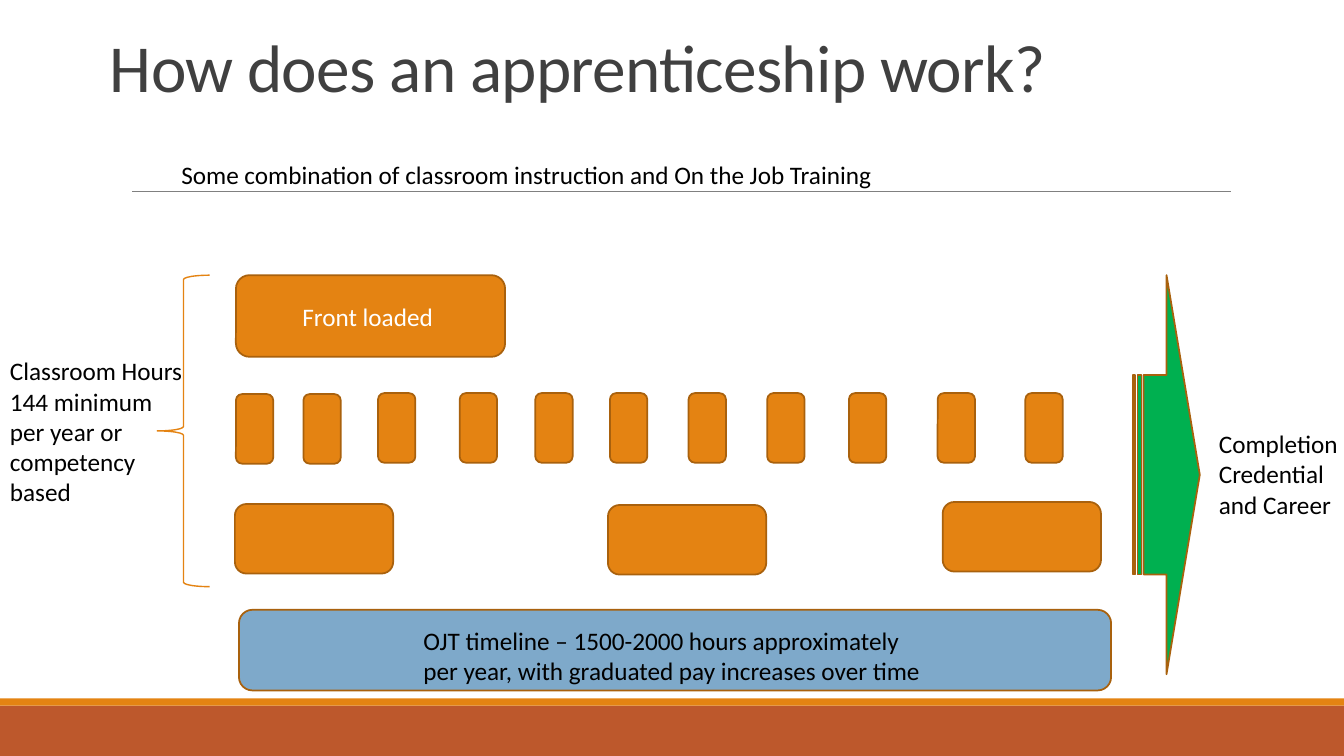
import pptx
import pptx.util
import pptx.dml.color
import pptx.enum.shapes
import pptx.enum.text
import pptx.oxml.ns
import lxml.etree

Inches = pptx.util.Inches
Pt = pptx.util.Pt
RGBColor = pptx.dml.color.RGBColor
SHAPE = pptx.enum.shapes.MSO_SHAPE
ALIGN = pptx.enum.text.PP_ALIGN
ANCHOR = pptx.enum.text.MSO_ANCHOR

ORANGE = RGBColor(0xE4, 0x83, 0x12)
RUST = RGBColor(0xBD, 0x58, 0x2C)
BROWN = RGBColor(0xA9, 0x61, 0x0D)
BLUE = RGBColor(0x7E, 0xA9, 0xCA)
GREEN = RGBColor(0x00, 0xB0, 0x50)
GRAY = RGBColor(0x80, 0x80, 0x80)
DARK = RGBColor(0x40, 0x40, 0x40)
BLACK = RGBColor(0, 0, 0)
WHITE = RGBColor(0xFF, 0xFF, 0xFF)

deck = pptx.Presentation()
deck.slide_width = Inches(13.33)
deck.slide_height = Inches(7.5)
slide = deck.slides.add_slide(deck.slide_layouts[5])


def write(holder, lines, size=18, color=BLACK, align=ALIGN.LEFT,
          anchor=ANCHOR.TOP, wrap=True):
    frame = holder.text_frame
    frame.word_wrap = wrap
    frame.auto_size = pptx.enum.text.MSO_AUTO_SIZE.NONE
    frame.vertical_anchor = anchor
    frame.text = "\n".join(lines)
    for paragraph in frame.paragraphs:
        paragraph.alignment = align
        for run in paragraph.runs:
            run.font.name = "Calibri"
            run.font.size = Pt(size)
            run.font.color.rgb = color


def draw(kind, left, top, width, height, fill=None, line=None, weight=1.25):
    shape = slide.shapes.add_shape(
        kind, Inches(left), Inches(top), Inches(width), Inches(height))
    shape.shadow.inherit = False
    if fill is None:
        shape.fill.background()
    else:
        shape.fill.solid()
        shape.fill.fore_color.rgb = fill
    if line is None:
        shape.line.fill.background()
    else:
        shape.line.color.rgb = line
        shape.line.width = Pt(weight)
    return shape


# Footer bands and the rule under the heading
draw(SHAPE.RECTANGLE, 0, 7, 13.33, 0.5, RUST)
draw(SHAPE.RECTANGLE, 0, 6.93, 13.33, 0.07, ORANGE)
heading_rule = slide.shapes.add_connector(
    pptx.enum.shapes.MSO_CONNECTOR.STRAIGHT,
    Inches(1.31), Inches(1.9), Inches(12.21), Inches(1.9))
heading_rule.line.color.rgb = GRAY
heading_rule.line.width = Pt(0.5)
lxml.etree.SubElement(heading_rule.element.spPr, pptx.oxml.ns.qn("a:effectLst"))

# Title
title = slide.shapes.title
title.left, title.top = Inches(0.99), Inches(0.15)
title.width, title.height = Inches(10.5), Inches(0.95)
write(title, ["How does an apprenticeship work?"], size=48, color=DARK,
      anchor=ANCHOR.BOTTOM)
title_line = title.text_frame.paragraphs[0]
title_line.line_spacing = 0.85
title_line.runs[0].font.element.set("spc", "-50") if hasattr(
    title_line.runs[0].font, "element") else title_line.runs[0]._r.get_or_add_rPr().set("spc", "-50")

# On-the-job timeline, front-loaded block, weekly classes and class blocks
draw(SHAPE.ROUNDED_RECTANGLE, 2.37, 6.05, 8.65, 0.8, BLUE, BROWN)
front_loaded = draw(SHAPE.ROUNDED_RECTANGLE, 2.34, 2.73, 2.67, 0.81, ORANGE, BROWN)
write(front_loaded, ["Front loaded "], color=WHITE, align=ALIGN.CENTER,
      anchor=ANCHOR.MIDDLE)

for left in (2.34, 3.01, 3.75, 4.56, 5.31, 6.05, 6.83, 7.61, 8.42, 9.3, 10.17):
    top = 3.91 if left < 3.5 else 3.9
    draw(SHAPE.ROUNDED_RECTANGLE, left, top, 0.37, 0.69, ORANGE, BROWN)

for left, top in ((2.33, 5), (6.03, 5.01), (9.35, 4.98)):
    draw(SHAPE.ROUNDED_RECTANGLE, left, top, 1.57, 0.69, ORANGE, BROWN)

# Brace for classroom hours and arrow to completion
draw(SHAPE.LEFT_BRACE, 1.56, 2.73, 0.52, 3.09, line=ORANGE, weight=1)
draw(SHAPE.STRIPED_RIGHT_ARROW, 11.24, 2.73, 0.66, 3.96, GREEN, BROWN)

# Labels: left, top, width, height, wrap, paragraphs
labels = [
    (4.1, 6.15, 5.15, 0.71, True,
     ["OJT timeline – 1500-2000 hours approximately per year, "
      "with graduated pay increases over time"]),
    (0, 3.48, 2.05, 1.62, True,
     ["Classroom Hours", "144 minimum \vper year or competency based"]),
    (1.7, 1.53, 10.22, 0.4, True,
     ["Some combination of classroom instruction and On the Job Training"]),
    (11.99, 4.2, 1.45, 1.01, False, ["Completion", "Credential", "and Career"]),
]
for left, top, width, height, wrap, lines in labels:
    label = slide.shapes.add_textbox(
        Inches(left), Inches(top), Inches(width), Inches(height))
    write(label, lines, wrap=wrap)

deck.save("out.pptx")
